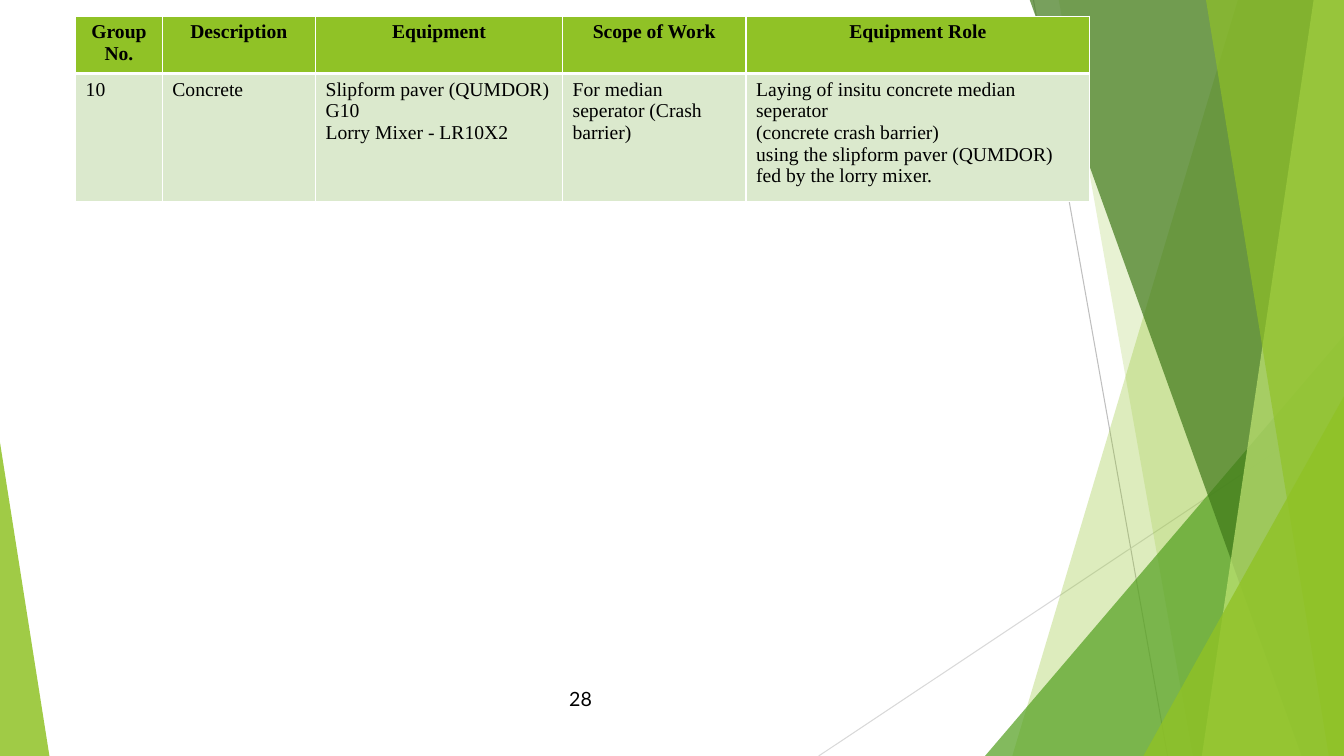
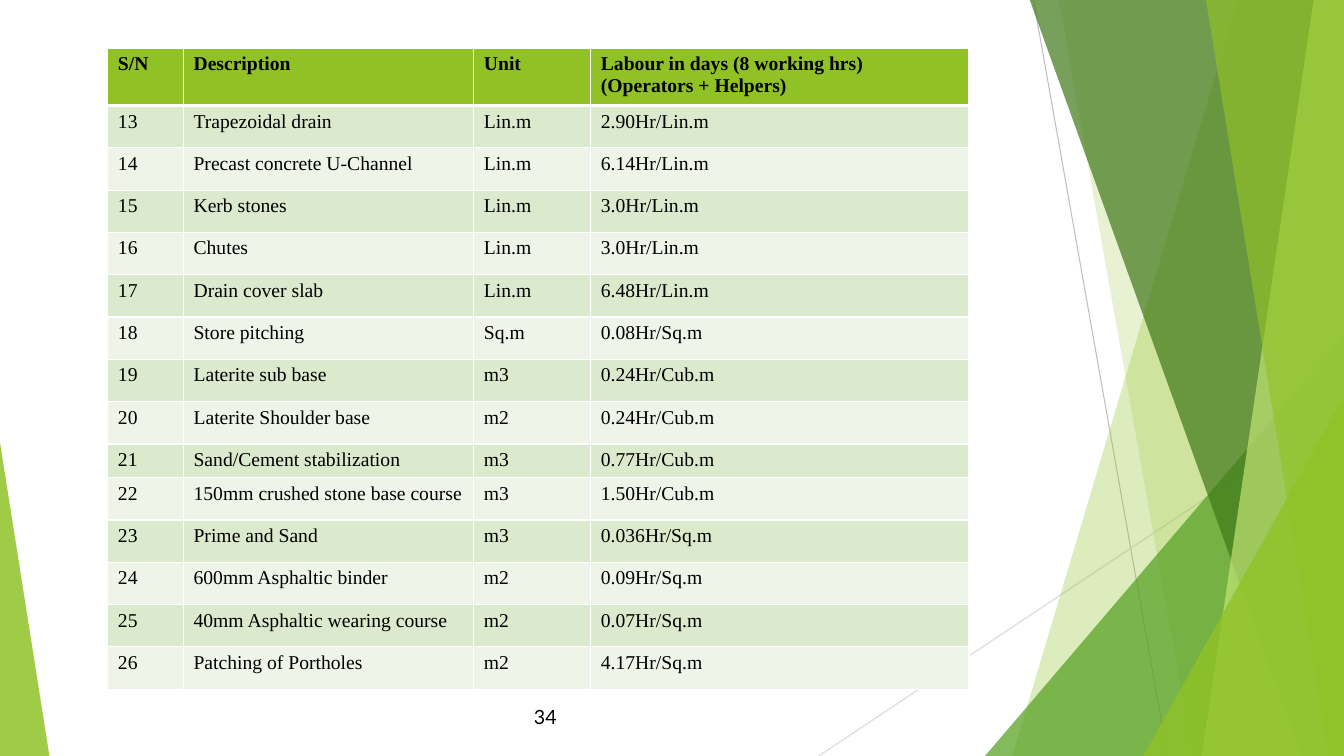
"""Build two equipment and labour table slides with a green faceted backdrop."""
from lxml.etree import SubElement
from pptx import Presentation
from pptx.dml.color import RGBColor
from pptx.enum.shapes import MSO_CONNECTOR, MSO_SHAPE
from pptx.enum.text import MSO_ANCHOR, PP_ALIGN
from pptx.oxml.ns import qn
from pptx.util import Inches, Pt

WIDTH, HEIGHT = 13.33, 7.5
COLORS = {
    "lime": "90C226", "leaf": "54A021", "moss": "3F7819", "pale": "C0E474",
    "odd": "DBE9CD", "even": "EEF4E8", "white": "FFFFFF", "black": "000000",
    "grey": "BFBFBF", "mist": "D9D9D9",
}

ROLES = [
    ["Group No.", "Description", "Equipment", "Scope of Work", "Equipment Role"],
    ["10", "Concrete", "Slipform paver (QUMDOR) G10\nLorry Mixer - LR10X2",
     "For median seperator (Crash barrier)",
     "Laying of insitu concrete median seperator\n(concrete crash barrier)\n"
     "using the slipform paver (QUMDOR) fed by the lorry mixer."],
]
WORKS = [
    ("Trapezoidal drain", "Lin.m", "2.90Hr/Lin.m"),
    ("Precast concrete U-Channel", "Lin.m", "6.14Hr/Lin.m"),
    ("Kerb stones", "Lin.m", "3.0Hr/Lin.m"),
    ("Chutes", "Lin.m", "3.0Hr/Lin.m"),
    ("Drain cover slab", "Lin.m", "6.48Hr/Lin.m"),
    ("Store pitching", "Sq.m", "0.08Hr/Sq.m"),
    ("Laterite sub base", "m3", "0.24Hr/Cub.m"),
    ("Laterite Shoulder base", "m2", "0.24Hr/Cub.m"),
    ("Sand/Cement stabilization", "m3", "0.77Hr/Cub.m"),
    ("150mm crushed stone base course", "m3", "1.50Hr/Cub.m"),
    ("Prime and Sand", "m3", "0.036Hr/Sq.m"),
    ("600mm Asphaltic binder", "m2", "0.09Hr/Sq.m"),
    ("40mm Asphaltic wearing course", "m2", "0.07Hr/Sq.m"),
    ("Patching of Portholes", "m2", "4.17Hr/Sq.m"),
]
LABOUR = [["S/N", "Description", "Unit",
           "Labour in days (8 working hrs) (Operators + Helpers)"]]
LABOUR += [[str(num), *work] for num, work in enumerate(WORKS, 13)]


def color(name):
    return RGBColor.from_string(COLORS[name])


def tint(shape, name, alpha):
    shape.shadow.inherit = False
    shape.line.fill.background()
    shape.fill.solid()
    shape.fill.fore_color.rgb = color(name)
    tone = shape.fill._xPr.find(qn("a:solidFill"))[0]
    SubElement(tone, qn("a:alpha"), val=str(alpha * 1000))


def add_line(slide, start, end, name):
    points = [Inches(value) for value in (*start, *end)]
    line = slide.shapes.add_connector(MSO_CONNECTOR.STRAIGHT, *points)
    line.line.color.rgb = color(name)
    line.line.width = Pt(0.75)
    SubElement(line._element.spPr, qn("a:effectLst"))


def add_band(slide, top, bottom, name, alpha):
    edge = -0.01
    points = [(WIDTH, edge), (WIDTH, HEIGHT), (bottom, HEIGHT)]
    form = slide.shapes.build_freeform(Inches(top), Inches(edge))
    form.add_line_segments([(Inches(x), Inches(y)) for x, y in points], close=True)
    tint(form.convert_to_shape(), name, alpha)


def add_wedge(slide, left, top, width, apex, name, alpha):
    box = [Inches(value) for value in (left, top, width, HEIGHT - top)]
    wedge = slide.shapes.add_shape(MSO_SHAPE.ISOSCELES_TRIANGLE, *box)
    wedge.adjustments[0] = apex
    tint(wedge, name, alpha)


def add_decor(slide):
    add_line(slide, (10.25, 0), (11.58, HEIGHT), "grey")
    add_line(slide, (WIDTH, 4.03), (8.12, HEIGHT), "mist")
    add_band(slide, 12.28, 10.04, "lime", 30)
    add_band(slide, 10.5, 11.83, "lime", 20)
    add_wedge(slide, 9.77, 3.33, 3.56, 1, "leaf", 72)
    add_band(slide, 10.21, 12.91, "moss", 70)
    add_band(slide, 13.03, 11.92, "pale", 70)
    add_band(slide, 11.96, 13.18, "lime", 65)
    add_wedge(slide, 11.34, 3.93, 1.99, 1, "lime", 80)
    add_wedge(slide, 0, 4.39, 0.49, 0, "lime", 85)


def style(par, font, align, bold=False):
    par.alignment = align
    for run in par.runs:
        run.font.name = font
        run.font.size = Pt(14)
        run.font.bold = bold
        run.font.color.rgb = color("black")


def add_page(slide, left, top, num):
    box = slide.shapes.add_textbox(Inches(left), Inches(top), Inches(0.75), Inches(0.4))
    frame = box.text_frame
    frame.word_wrap = True
    frame.vertical_anchor = MSO_ANCHOR.MIDDLE
    frame.text = str(num)
    style(frame.paragraphs[0], "Lato", PP_ALIGN.RIGHT)


def add_edges(cell, base):
    props = cell._tc.get_or_add_tcPr()
    widths = {"lnL": 1, "lnR": 1, "lnT": 1, "lnB": base}
    for spot, (tag, width) in enumerate(widths.items()):
        edge = props.makeelement(qn(f"a:{tag}"), {"w": str(Pt(width))})
        fill = SubElement(edge, qn("a:solidFill"))
        SubElement(fill, qn("a:srgbClr"), val=COLORS["white"])
        props.insert(spot, edge)


def fill_cell(cell, text, row, align):
    head = row == 0
    cell.text_frame.text = text
    for par in cell.text_frame.paragraphs:
        style(par, "Times New Roman", align if head else PP_ALIGN.LEFT, head)
    cell.fill.solid()
    cell.fill.fore_color.rgb = color("lime" if head else "odd" if row % 2 else "even")
    add_edges(cell, 3 if head else 1)


def add_grid(slide, left, top, data, cols, rows, align):
    box = [Inches(value) for value in (left, top, sum(cols), sum(rows))]
    grid = slide.shapes.add_table(len(rows), len(cols), *box).table
    for col, width in zip(grid.columns, cols):
        col.width = Inches(width)
    for row, height in zip(grid.rows, rows):
        row.height = Inches(height)
    for row, texts in enumerate(data):
        for col, text in enumerate(texts):
            fill_cell(grid.cell(row, col), text, row, align)


def add_slide(deck):
    slide = deck.slides.add_slide(deck.slide_layouts[6])
    add_decor(slide)
    return slide


def main():
    deck = Presentation()
    deck.slide_width, deck.slide_height = Inches(WIDTH), Inches(HEIGHT)

    slide = add_slide(deck)
    add_page(slide, 5.22, 6.73, 28)
    add_grid(slide, 0.75, 0.16, ROLES, [0.86, 1.52, 2.45, 1.82, 3.41],
             [0.57, 1.1], PP_ALIGN.CENTER)

    slide = add_slide(deck)
    add_page(slide, 4.87, 6.91, 34)
    heights = [0.32 if row[0] == "21" else 0.42 for row in LABOUR]
    add_grid(slide, 1.07, 0.48, LABOUR, [0.75, 2.88, 1.16, 3.75],
             heights, PP_ALIGN.LEFT)

    deck.save("out.pptx")


if __name__ == "__main__":
    main()
